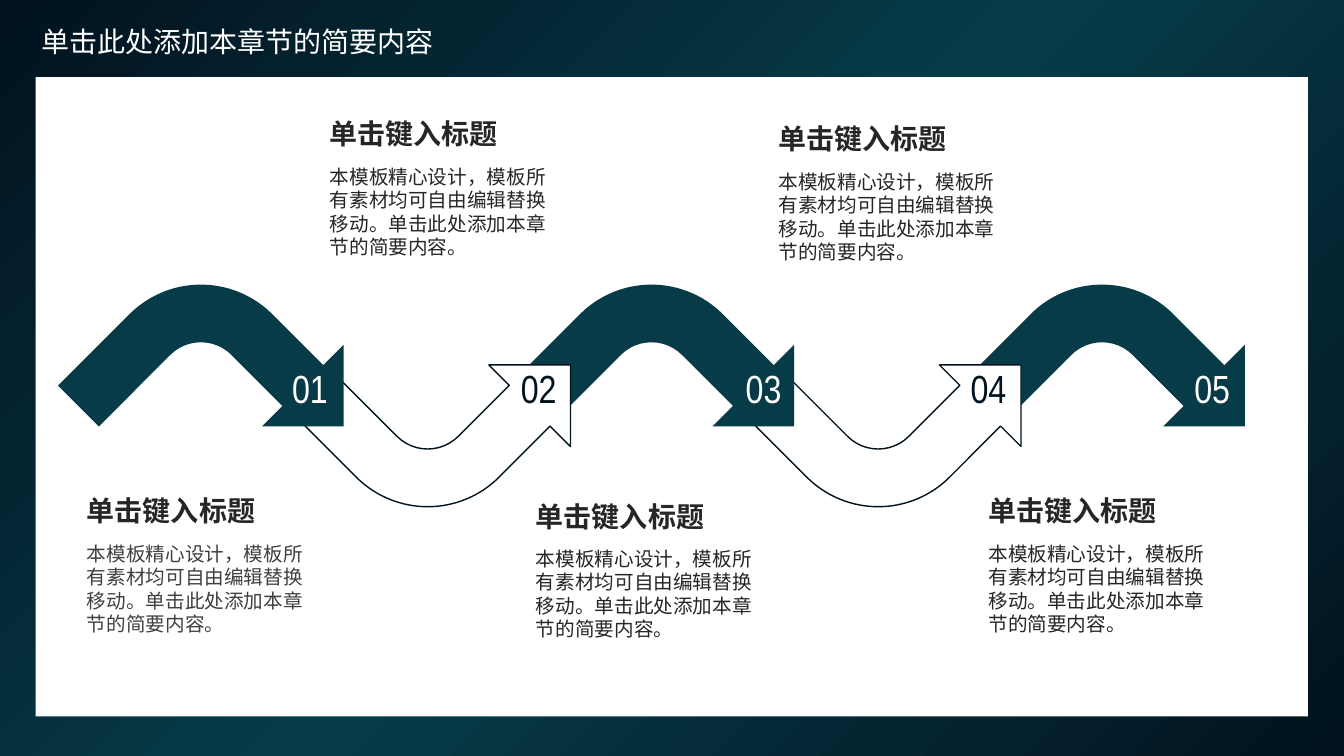
import copy

import pptx
import pptx.dml.color
import pptx.enum.shapes
import pptx.enum.text
import pptx.oxml.ns
import pptx.util
from lxml import etree

COLORS = {"teal": "073B48", "navy": "01131F", "white": "FFFFFF", "ink": "262626", "gray": "404040"}
CJK = "Noto Sans CJK SC"
HEADING = "单击键入标题"
BODY = "本模板精心设计，模板所有素材均可自由编辑替换移动。单击此处添加本章节的简要内容。"
STEPS = [
    ("01", 201.6, 55, 349.3, "gray"),
    ("02", 365, 228.5, 80, "ink"),
    ("03", 525.6, 375.7, 352.9, "ink"),
    ("04", 686.2, 549, 83.6, "ink"),
    ("05", 846, 699, 349.3, "ink"),
]


class SlideBuilder:
    """Draws styled elements on one slide, with lengths in points."""

    def __init__(self, slide):
        self.slide = slide

    def color(self, name):
        return pptx.dml.color.RGBColor.from_string(COLORS[name])

    def box(self, *lengths):
        return [pptx.util.Pt(length) for length in lengths]

    def background(self, edge, middle):
        fill = self.slide.background.fill
        fill.gradient()
        fill.gradient_angle = 315
        stop_list = fill._fill._gradFill.gsLst
        stop_list.insert(1, copy.deepcopy(stop_list[0]))
        for stop, name, position in zip(fill.gradient_stops, (edge, middle, edge), (0, 0.5, 1)):
            stop.color.rgb = self.color(name)
            stop.position = position

    def shape(self, kind, left, top, width, height, fill, line=None):
        shape = self.slide.shapes.add_shape(kind, *self.box(left, top, width, height))
        shape.shadow.inherit = False
        shape.fill.solid()
        shape.fill.fore_color.rgb = self.color(fill)
        if line:
            shape.line.color.rgb = self.color(line)
            shape.line.width = pptx.util.Pt(1)
        else:
            shape.line.fill.background()
        return shape

    def arrow(self, left, top, size, upward):
        kind = pptx.enum.shapes.MSO_SHAPE.BENT_ARROW
        fill, line = ("white", "navy") if upward else ("teal", None)
        arrow = self.shape(kind, left, top, size, size, fill, line)
        arrow.rotation = 315 if upward else 45
        if upward:
            arrow._element.spPr.xfrm.set("flipV", "1")

    def text(self, left, top, width, height, paragraphs, anchor="TOP"):
        frame = self.slide.shapes.add_textbox(*self.box(left, top, width, height)).text_frame
        frame.word_wrap = True
        frame.vertical_anchor = getattr(pptx.enum.text.MSO_ANCHOR, anchor)
        frame.text = "\n".join(content for content, *_ in paragraphs)
        for paragraph, (_, size, font, color, bold, space) in zip(frame.paragraphs, paragraphs):
            paragraph.space_before = pptx.util.Pt(space)
            for run in paragraph.runs:
                run.font.size = pptx.util.Pt(size)
                run.font.name = font
                run.font.bold = bold
                run.font.color.rgb = self.color(color)
                east_asian = etree.SubElement(run.font._element, pptx.oxml.ns.qn("a:ea"))
                east_asian.set("typeface", font)


def main():
    presentation = pptx.Presentation()
    presentation.slide_width = pptx.util.Pt(960)
    presentation.slide_height = pptx.util.Pt(540)
    builder = SlideBuilder(presentation.slides.add_slide(presentation.slide_layouts[6]))

    builder.background("navy", "teal")
    builder.shape(pptx.enum.shapes.MSO_SHAPE.RECTANGLE, 25.4, 55.2, 908.8, 456.6, "white")
    builder.text(22.3, 13.7, 319.7, 31.7,
                 [("单击此处添加本章节的简要内容", 20, CJK, "white", False, 0)], "MIDDLE")

    for index in reversed(range(len(STEPS))):
        pair, upward = divmod(index, 2)
        builder.arrow(75.6 + 321.84 * pair + 162 * upward, 193 + 14.4 * upward, 164.9, upward)

    for index, (number, number_left, left, top, body_color) in enumerate(STEPS):
        number_color = "navy" if index % 2 else "white"
        builder.text(number_left, 257, 48.2, 41,
                     [(number, 28, "Arial Narrow", number_color, False, 0)])
        builder.text(left, top, 175, 128,
                     [(HEADING, 20, CJK, "ink", True, 0), (BODY, 14, CJK, body_color, False, 10)])

    presentation.save("out.pptx")


if __name__ == "__main__":
    main()
